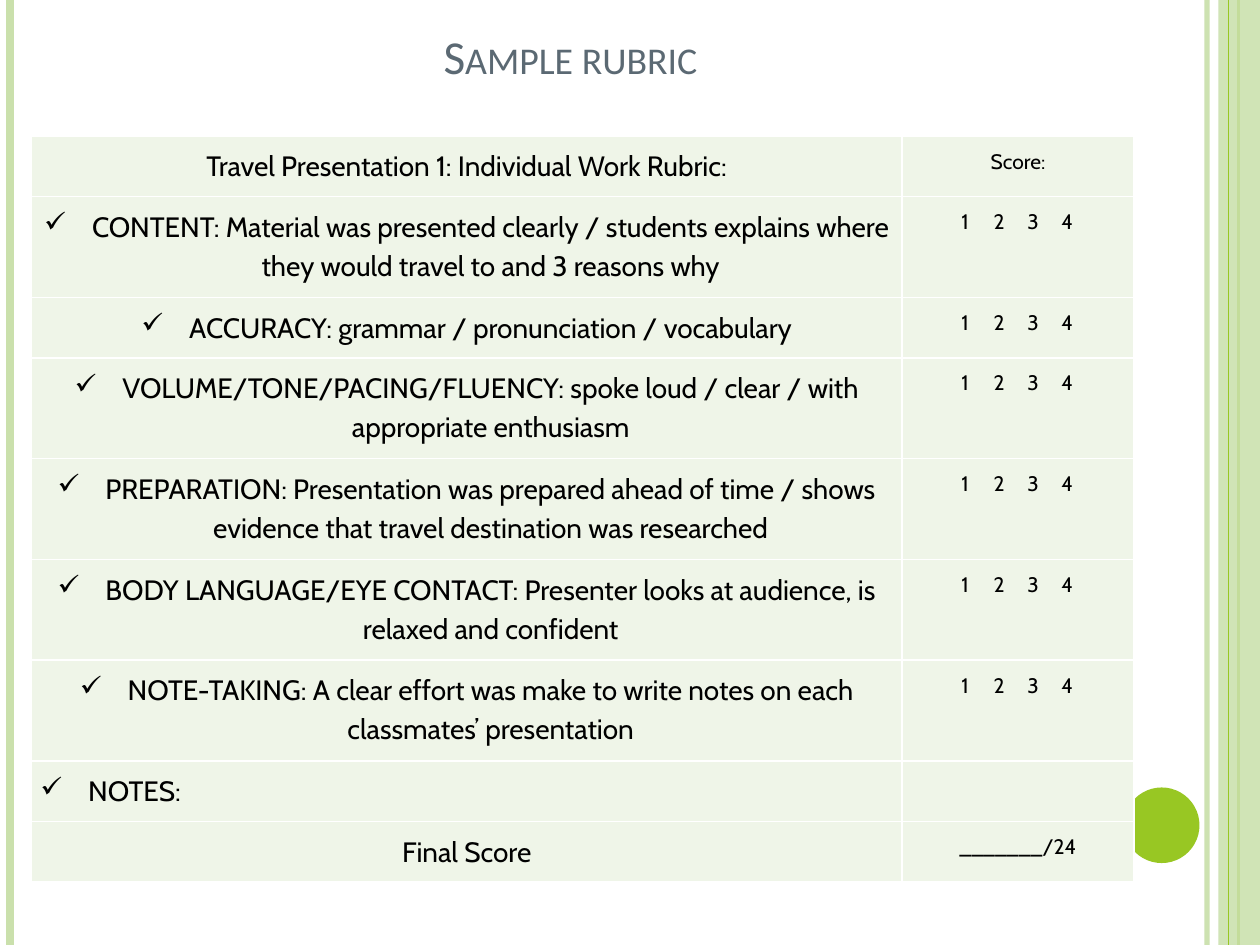
from typing import NamedTuple

from lxml.etree import SubElement
from pptx import Presentation
from pptx.dml.color import RGBColor
from pptx.enum.shapes import MSO_CONNECTOR, MSO_SHAPE
from pptx.enum.text import MSO_ANCHOR, PP_ALIGN
from pptx.oxml.ns import qn
from pptx.util import Inches, Pt

GREEN, PALE_GREEN, ROW_TINT = "98C723", "CAE0AC", "EFF5E8"
SLATE, BLACK, WHITE = "5B6973", "000000", "FFFFFF"
SCALE = "\t1\t2\t3\t4"


class Stripe(NamedTuple):
    x: float
    color: str
    weight: float
    opacity: int = 100


class Criterion(NamedTuple):
    text: str
    score: str = SCALE
    checked: bool = True
    align: PP_ALIGN = PP_ALIGN.CENTER
    height: float = 0.8


STRIPES_BEHIND_BAND = [
    Stripe(9.58, PALE_GREEN, 3, 93),
    Stripe(0.08, PALE_GREEN, 4.5),
    Stripe(9.83, GREEN, 1.5),
]
STRIPE_ON_BAND = Stripe(9.75, GREEN, 0.75)

RUBRIC = [
    Criterion("Travel Presentation 1: Individual Work Rubric:", "Score:", False, height=0.48),
    Criterion("CONTENT: Material was presented clearly / students explains where "
              "they would travel to and 3 reasons why"),
    Criterion("ACCURACY: grammar / pronunciation / vocabulary", height=0.48),
    Criterion("VOLUME/TONE/PACING/FLUENCY: spoke loud / clear / with appropriate enthusiasm"),
    Criterion("PREPARATION: Presentation was prepared ahead of time / shows "
              "evidence that travel destination was researched"),
    Criterion("BODY LANGUAGE/EYE CONTACT: Presenter looks at audience, is relaxed and confident"),
    Criterion("NOTE-TAKING: A clear effort was make to write notes on each "
              "classmates’ presentation"),
    Criterion("NOTES:", "", align=PP_ALIGN.LEFT),
    Criterion("Final Score", "_______/24", False, height=0.48),
]
RUBRIC[7] = RUBRIC[7]._replace(height=0.48)


def rgb(color: str) -> RGBColor:
    return RGBColor.from_string(color)


def set_all(target, values: dict) -> None:
    for name, value in values.items():
        setattr(target, name, value)


def set_opacity(shape, percent: int) -> None:
    for color in shape._element.spPr.iter(qn("a:srgbClr")):
        SubElement(color, qn("a:alpha"), val=str(percent * 1000))


def draw_stripe(slide, stripe: Stripe) -> None:
    x = Inches(stripe.x)
    line = slide.shapes.add_connector(MSO_CONNECTOR.STRAIGHT, x, 0, x, Inches(7.5))
    line.line.color.rgb = rgb(stripe.color)
    line.line.width = Pt(stripe.weight)
    if stripe.opacity < 100:
        set_opacity(line, stripe.opacity)
    SubElement(line._element.spPr, qn("a:effectLst"))


def draw_solid(slide, preset: MSO_SHAPE, box: tuple, color: str):
    solid = slide.shapes.add_shape(preset, *map(Inches, box))
    solid.shadow.inherit = False
    solid.fill.solid()
    solid.fill.fore_color.rgb = rgb(color)
    solid.line.fill.background()
    return solid


def style_cell(cell) -> None:
    margins = ("margin_left", "margin_right", "margin_top", "margin_bottom")
    set_all(cell, dict.fromkeys(margins, Inches(0.07)))
    properties = cell._tc.get_or_add_tcPr()
    for side in ("lnL", "lnR", "lnT", "lnB"):
        border = SubElement(properties, qn(f"a:{side}"), w=str(Pt(1)))
        SubElement(SubElement(border, qn("a:solidFill")), qn("a:srgbClr"), val=WHITE)
    cell.fill.solid()
    cell.fill.fore_color.rgb = rgb(ROW_TINT)


def write_cell(cell, text: str, size: int, align: PP_ALIGN):
    paragraph = cell.text_frame.paragraphs[0]
    set_all(paragraph, {"alignment": align, "line_spacing": 1.15})
    if text:
        run = paragraph.add_run()
        run.text = text
        set_all(run.font, {"name": "Cabin", "size": Pt(size), "bold": False})
        run.font.color.rgb = rgb(BLACK)
    return paragraph._p.get_or_add_pPr()


def add_check(properties) -> None:
    properties.set("marL", str(Inches(0.38)))
    properties.set("indent", str(-Inches(0.38)))
    SubElement(properties, qn("a:buChar"), char="✓")


def add_scale_stops(properties) -> None:
    stops = SubElement(properties, qn("a:tabLst"))
    for step in range(4):
        SubElement(stops, qn("a:tab"), pos=str(Inches(0.43 + 0.27 * step)), algn="ctr")


def draw_rubric(slide) -> None:
    frame = slide.shapes.add_table(len(RUBRIC), 2, Inches(0.25), Inches(1.08),
                                   Inches(8.75), Inches(5.92))
    table = frame.table
    set_all(table, {"first_row": False, "horz_banding": False})
    for column, width in zip(table.columns, (6.91, 1.84)):
        column.width = Inches(width)
    for row, criterion in zip(table.rows, RUBRIC):
        row.height = Inches(criterion.height)
        description, score = row.cells
        style_cell(description)
        style_cell(score)
        properties = write_cell(description, criterion.text, 16, criterion.align)
        if criterion.checked:
            add_check(properties)
        is_scale = criterion.score == SCALE
        score_align = PP_ALIGN.LEFT if is_scale else PP_ALIGN.CENTER
        properties = write_cell(score, criterion.score, 12, score_align)
        if is_scale:
            add_scale_stops(properties)


def write_title(slide) -> None:
    title = slide.shapes.title
    set_all(title, {"left": Inches(3.42), "top": Inches(0.17),
                    "width": Inches(2.67), "height": Inches(0.55)})
    title.text_frame.text = "Sample rubric"
    set_all(title.text_frame, {"vertical_anchor": MSO_ANCHOR.BOTTOM, "word_wrap": True})
    paragraph = title.text_frame.paragraphs[0]
    paragraph.alignment = PP_ALIGN.LEFT
    run = paragraph.runs[0]
    set_all(run.font, {"name": "Calibri", "size": Pt(27)})
    run.font.color.rgb = rgb(SLATE)
    run._r.get_or_add_rPr().set("cap", "small")


def main() -> None:
    deck = Presentation()
    set_all(deck, {"slide_width": Inches(10), "slide_height": Inches(7.5)})
    slide = deck.slides.add_slide(deck.slide_layouts[5])

    # Side stripes, right band and circle
    for stripe in STRIPES_BEHIND_BAND:
        draw_stripe(slide, stripe)
    band = draw_solid(slide, MSO_SHAPE.RECTANGLE, (9.67, 0, 0.33, 7.5), PALE_GREEN)
    set_opacity(band, 87)
    draw_stripe(slide, STRIPE_ON_BAND)
    draw_solid(slide, MSO_SHAPE.OVAL, (8.92, 6.25, 0.6, 0.6), GREEN)

    # Title and scoring table
    write_title(slide)
    draw_rubric(slide)
    deck.save("out.pptx")


if __name__ == "__main__":
    main()
